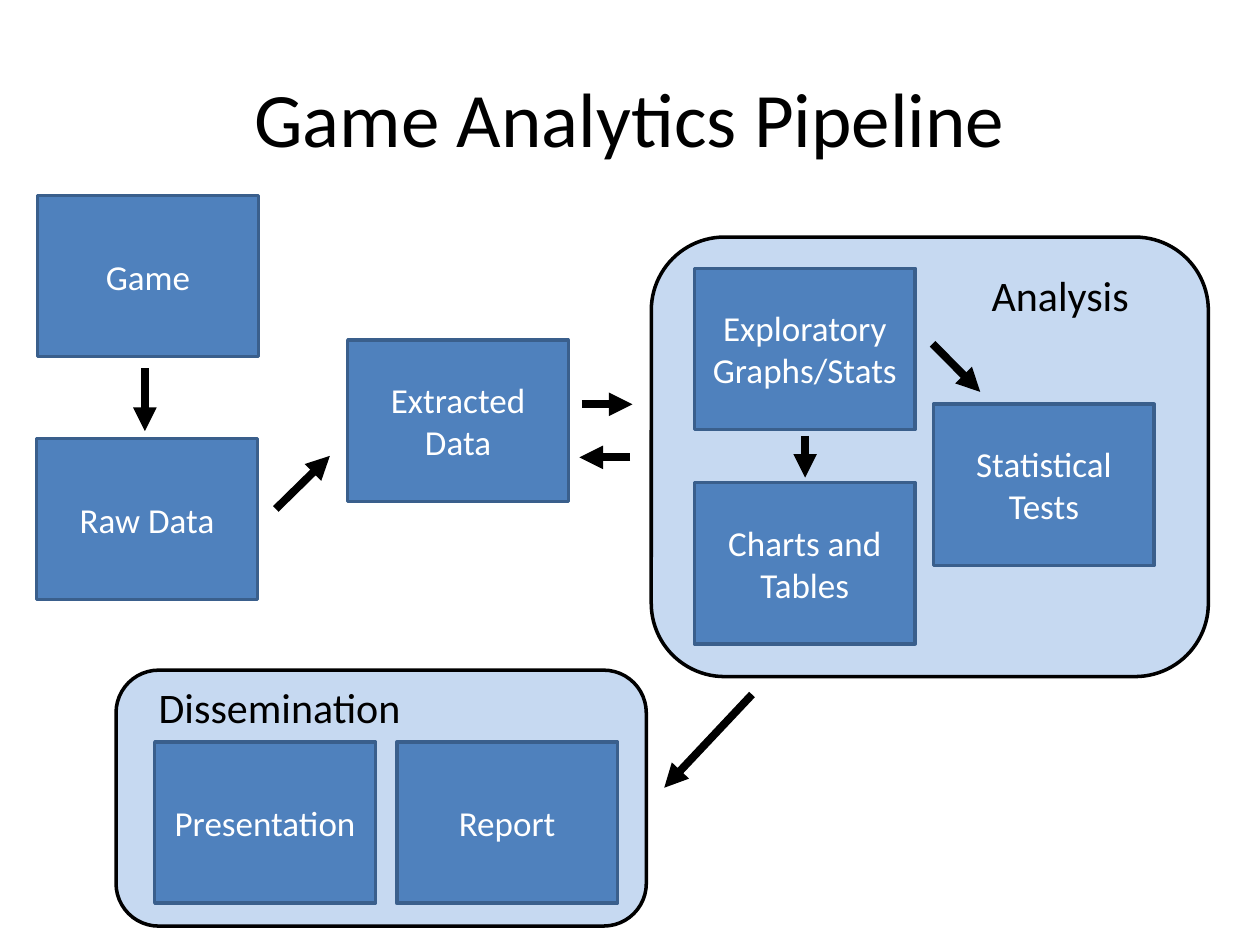
from lxml import etree
from pptx import Presentation
from pptx.dml.color import RGBColor
from pptx.enum.shapes import MSO_CONNECTOR, MSO_SHAPE
from pptx.enum.text import MSO_ANCHOR, MSO_AUTO_SIZE, PP_ALIGN
from pptx.oxml.ns import qn
from pptx.util import Cm, Pt

RECTANGLE, ROUNDED = MSO_SHAPE.RECTANGLE, MSO_SHAPE.ROUNDED_RECTANGLE
STRAIGHT = MSO_CONNECTOR.STRAIGHT
MIDDLE, TOP = MSO_ANCHOR.MIDDLE, MSO_ANCHOR.TOP
CENTER, LEFT = PP_ALIGN.CENTER, PP_ALIGN.LEFT
FIT_SHAPE = MSO_AUTO_SIZE.SHAPE_TO_FIT_TEXT

FONT = "Calibri"
BLACK, WHITE = "000000", "FFFFFF"
PANEL_FILL, STEP_FILL, STEP_LINE = "C6D9F1", "4F81BD", "3A5F8C"

# All places and sizes are in centimetres.
TITLE = ("Game Analytics Pipeline", (1.27, 0.76, 22.86, 3.18))
PANELS = [
    (2.34, 13.51, 10.69, 5.16),
    (13.13, 4.78, 11.23, 8.86),
]
PANEL_LABELS = [
    ("Analysis", (19.74, 5.31, 3.3, 1.27)),
    ("Dissemination", (2.95, 13.61, 5.44, 1.27)),
]
STEP_SIZE = (4.45, 3.25)
STEPS = [
    ("Game", 0.76, 3.94),
    ("Raw Data", 0.74, 8.84),
    ("Extracted Data", 7.01, 6.86),
    ("Exploratory Graphs/Stats", 14, 5.41),
    ("Charts and Tables", 14, 9.73),
    ("Statistical Tests", 18.82, 8.15),
    ("Presentation", 3.12, 14.96),
    ("Report", 8, 14.96),
]
ARROWS = [
    (2.92, 7.42, 2.92, 8.69),      # game to raw data
    (5.56, 10.26, 6.65, 9.19),     # raw to extracted data
    (11.73, 8.15, 12.75, 8.15),    # extracted data to analysis
    (12.7, 9.22, 11.68, 9.22),     # and back
    (18.8, 6.93, 19.76, 7.9),      # exploration to tests
    (16.23, 8.79, 16.23, 9.63),    # exploration to charts
    (15.16, 14, 13.39, 15.88),     # analysis to dissemination
]


def color(value):
    return RGBColor.from_string(value)


def lengths(values):
    return [Cm(value) for value in values]


def write(shape, text, size, ink, align=CENTER, anchor=MIDDLE, wrap=True):
    frame = shape.text_frame
    frame.text = text
    frame.word_wrap = wrap
    frame.vertical_anchor = anchor
    para = frame.paragraphs[0]
    para.alignment = align
    font = para.runs[0].font
    font.name, font.size = FONT, Pt(size)
    font.color.rgb = color(ink)


def add_box(page, kind, place, fill, line):
    box = page.shapes.add_shape(kind, *lengths(place))
    box.shadow.inherit = False
    box.fill.solid()
    box.fill.fore_color.rgb = color(fill)
    box.line.color.rgb = color(line)
    box.line.width = Pt(2)
    return box


def add_arrow(page, ends):
    arrow = page.shapes.add_connector(STRAIGHT, *lengths(ends))
    arrow.line.color.rgb = color(BLACK)
    arrow.line.width = Pt(4.5)
    properties = arrow._element.spPr
    head = etree.SubElement(properties.find(qn("a:ln")), qn("a:tailEnd"))
    head.set("type", "triangle")
    etree.SubElement(properties, qn("a:effectLst"))


def main():
    deck = Presentation()
    deck.slide_width, deck.slide_height = Cm(25.4), Cm(19.05)
    page = deck.slides.add_slide(deck.slide_layouts[6])

    for place in PANELS:
        add_box(page, ROUNDED, place, PANEL_FILL, BLACK)

    text, place = TITLE
    write(page.shapes.add_textbox(*lengths(place)), text, 44, BLACK)

    for text, left, top in STEPS:
        step = add_box(page, RECTANGLE, (left, top, *STEP_SIZE), STEP_FILL, STEP_LINE)
        write(step, text, 20, WHITE)

    for ends in ARROWS:
        add_arrow(page, ends)

    for text, place in PANEL_LABELS:
        label = page.shapes.add_textbox(*lengths(place))
        write(label, text, 24, BLACK, LEFT, TOP, wrap=False)
        label.text_frame.auto_size = FIT_SHAPE

    deck.save("out.pptx")


if __name__ == "__main__":
    main()
